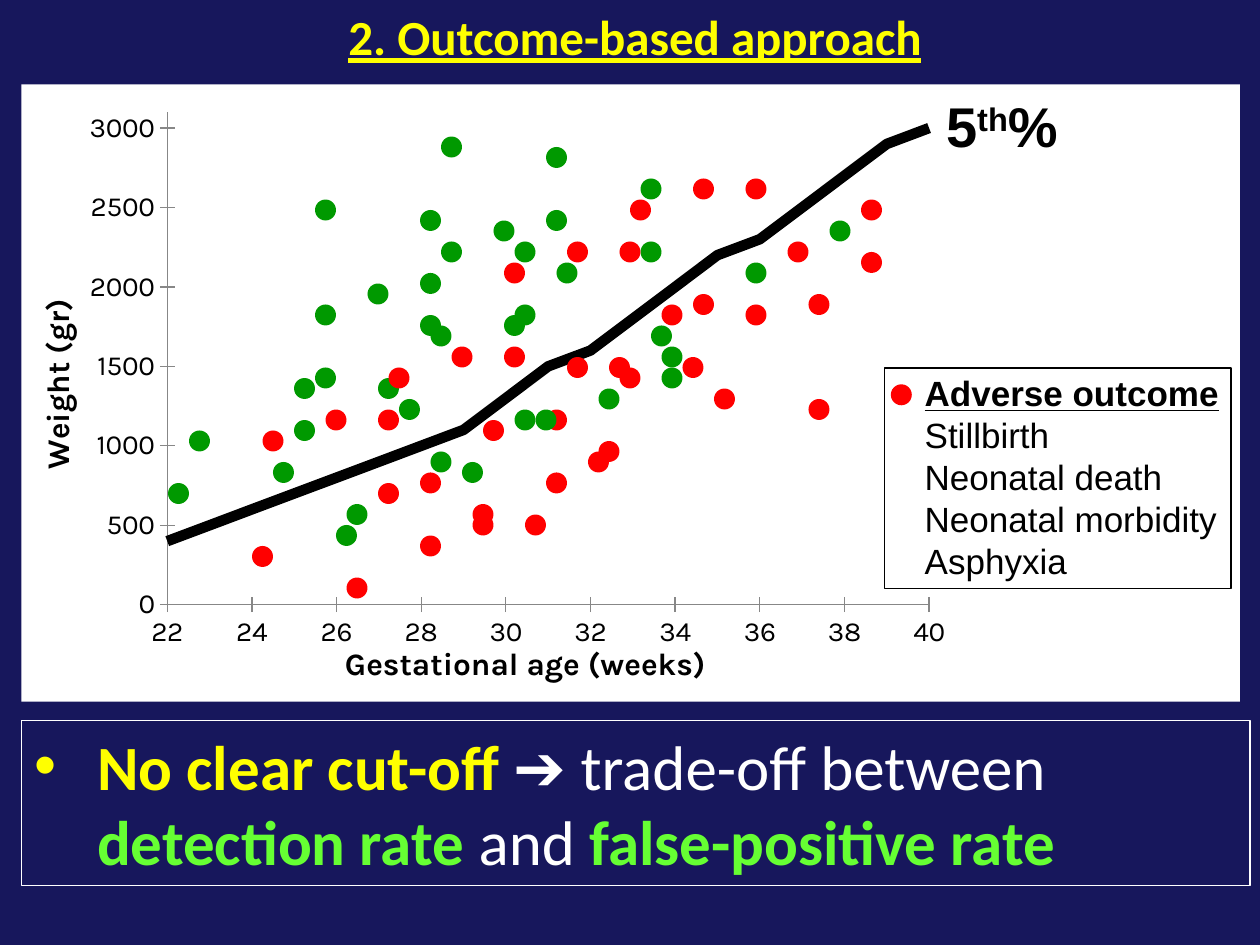
from dataclasses import dataclass

from lxml import etree
from pptx import Presentation
from pptx.chart.data import XyChartData
from pptx.dml.color import RGBColor
from pptx.enum.chart import XL_CHART_TYPE, XL_TICK_LABEL_POSITION, XL_TICK_MARK
from pptx.enum.shapes import MSO_SHAPE
from pptx.enum.text import MSO_ANCHOR, MSO_AUTO_SIZE, PP_ALIGN
from pptx.oxml import parse_xml
from pptx.oxml.ns import nsdecls, qn
from pptx.util import Inches, Pt


@dataclass(frozen=True)
class Theme:
    navy: str = "17175C"
    yellow: str = "FFFF00"
    white: str = "FFFFFF"
    black: str = "000000"
    grey: str = "878787"
    lime: str = "66FF33"
    red: str = "FF0000"
    green: str = "009900"
    heading_font: str = "Calibri"
    label_font: str = "Arial"
    chart_font: str = "Karla"
    title_size: int = 28
    body_size: int = 36
    percentile_size: int = 32
    legend_size: int = 20
    axis_title_size: int = 18
    tick_size: int = 16


THEME = Theme()
DOT = 1 / 6
GRID = 12  # dot positions are counted in twelfths of an inch

WEIGHTS = [400, 500, 600, 700, 800, 900, 1000, 1100, 1300, 1500,
           1600, 1800, 2000, 2200, 2300, 2500, 2700, 2900, 3000]

# Birth outcomes by layer, back to front: colour and (column, row)
OUTCOMES = [
    (THEME.red, [(71, 29), (58, 34), (75, 23), (77, 28), (66, 28), (68, 37), (82, 24),
                 (57, 42), (36, 46), (43, 33), (66, 17), (52, 39), (52, 45), (45, 49),
                 (77, 38)]),
    (THEME.green, [(61, 17), (47, 21), (53, 25), (52, 14), (61, 23), (42, 13), (48, 30),
                   (63, 33), (52, 20), (40, 30), (38, 38), (42, 23), (30, 35), (44, 44),
                   (28, 40)]),
    (THEME.red, [(59, 35), (46, 40), (63, 29), (65, 34), (54, 34), (56, 43), (50, 49),
                 (45, 48), (24, 52), (31, 39), (54, 23), (40, 45), (40, 51), (33, 55),
                 (82, 19)]),
    (THEME.green, [(49, 23), (35, 27), (41, 31), (40, 20), (49, 29), (30, 19), (36, 36),
                   (51, 39), (40, 26), (28, 36), (26, 44), (30, 29), (18, 41), (32, 50),
                   (16, 46), (63, 35), (49, 39), (33, 48), (41, 43), (79, 21), (71, 25),
                   (57, 37), (62, 31)]),
    (THEME.red, [(48, 33), (71, 17), (36, 39), (59, 23), (37, 35), (60, 19), (25, 41),
                 (48, 25)]),
]


def rgb(color):
    return RGBColor.from_string(color)


def style_font(font, name, size, color, bold=False, underline=False):
    font.name, font.size = name, Pt(size)
    font.bold, font.underline = bold, underline
    font.color.rgb = rgb(color)


def place(shape, left, top, width, height):
    shape.left, shape.top = Inches(left), Inches(top)
    shape.width, shape.height = Inches(width), Inches(height)


def add_shape(page, kind, left, top, width, height, fill=None, line=None, weight=1):
    shape = page.shapes.add_shape(
        kind, Inches(left), Inches(top), Inches(width), Inches(height))
    shape.shadow.inherit = False
    if fill:
        shape.fill.solid()
        shape.fill.fore_color.rgb = rgb(fill)
    else:
        shape.fill.background()
    if line:
        shape.line.color.rgb = rgb(line)
        shape.line.width = Pt(weight)
    else:
        shape.line.fill.background()
    return shape


def add_dot(page, left, top, color):
    add_shape(page, MSO_SHAPE.OVAL, left, top, DOT, DOT, fill=color)


def add_text(page, left, top, width, height):
    box = page.shapes.add_textbox(
        Inches(left), Inches(top), Inches(width), Inches(height))
    box.text_frame.word_wrap = True
    return box.text_frame


def fill_title(page):
    title = page.shapes.title
    place(title, 0.25, 0, 9.58, 0.57)
    title.text_frame.text = "2. Outcome-based approach"
    title.text_frame.auto_size = MSO_AUTO_SIZE.NONE
    para = title.text_frame.paragraphs[0]
    para.alignment = PP_ALIGN.CENTER
    style_font(para.runs[0].font, THEME.heading_font, THEME.title_size, THEME.yellow,
               bold=True, underline=True)


def fill_conclusion(page):
    body = page.placeholders[1]
    place(body, 0.17, 5.72, 9.75, 1.31)
    body.line.color.rgb = rgb(THEME.white)
    body.line.width = Pt(0.75)
    frame = body.text_frame
    frame.auto_size = MSO_AUTO_SIZE.NONE
    frame.vertical_anchor = MSO_ANCHOR.TOP
    para = frame.paragraphs[0]
    para.space_before = Pt(0)
    for text, color, bold in [
        ("No clear cut-off ", THEME.yellow, True),
        ("\u2794 trade-off between ", THEME.white, False),
        ("detection rate ", THEME.lime, True),
        ("and ", THEME.white, False),
        ("false-positive rate", THEME.lime, True),
    ]:
        span = para.add_run()
        span.text = text
        style_font(span.font, THEME.heading_font, THEME.body_size, color, bold)
    # Hanging bullet
    properties = para._p.get_or_add_pPr()
    properties.set("marL", str(Inches(0.5)))
    properties.set("indent", str(-Inches(0.5)))
    etree.SubElement(properties, qn("a:buFont")).set("typeface", "Arial")
    etree.SubElement(properties, qn("a:buChar")).set("char", "\u2022")


def manual_layout(left, top, width=None, height=None):
    parts = [("xMode", "edge"), ("yMode", "edge"), ("x", left), ("y", top)]
    if width:
        parts = [("layoutTarget", "inner")] + parts + [("w", width), ("h", height)]
    inner = "".join(f'<c:{tag} val="{value}"/>' for tag, value in parts)
    return parse_xml(f'<c:layout {nsdecls("c")}><c:manualLayout>{inner}'
                     '</c:manualLayout></c:layout>')


def set_layout(element, layout, position):
    for old in element.findall(qn("c:layout")):
        element.remove(old)
    element.insert(position, layout)


def format_axis(axis, title, low, high, step, left, top):
    axis.minimum_scale, axis.maximum_scale, axis.major_unit = low, high, step
    axis.has_major_gridlines = False
    axis.major_tick_mark = XL_TICK_MARK.CROSS
    axis.minor_tick_mark = XL_TICK_MARK.NONE
    axis.tick_label_position = XL_TICK_LABEL_POSITION.NEXT_TO_AXIS
    axis.tick_labels.number_format = "General"
    axis.tick_labels.number_format_is_linked = False
    axis.format.line.color.rgb = rgb(THEME.grey)
    style_font(axis.tick_labels.font, THEME.chart_font, THEME.tick_size, THEME.black)
    axis.axis_title.text_frame.text = title
    span = axis.axis_title.text_frame.paragraphs[0].runs[0]
    style_font(span.font, THEME.chart_font, THEME.axis_title_size, THEME.black, bold=True)
    set_layout(axis.axis_title._element, manual_layout(left, top), 1)


def add_growth_chart(page):
    data = XyChartData()
    series = data.add_series("Series 1")
    for week, weight in enumerate(WEIGHTS, start=22):
        series.add_data_point(week, weight)
    chart = page.shapes.add_chart(
        XL_CHART_TYPE.XY_SCATTER_SMOOTH_NO_MARKERS,
        Inches(0.17), Inches(0.75), Inches(7.42), Inches(4.75), data).chart
    chart.has_title = chart.has_legend = False
    style_font(chart.font, THEME.chart_font, 10, THEME.black)
    plot = chart.plots[0]
    plot.vary_by_categories = False
    curve = plot.series[0]
    curve.smooth = True
    curve.format.line.color.rgb = rgb(THEME.black)
    curve.format.line.width = Pt(6)
    format_axis(chart.category_axis, "Gestational age (weeks)", 22, 40, 2, 0.34, 0.92)
    format_axis(chart.value_axis, "Weight (gr)", 0, 3100, 500, 0.01, 0.34)
    area = chart._chartSpace.chart.plotArea
    set_layout(area, manual_layout(0.156, 0.03, 0.815, 0.834), 0)


def add_legend(page):
    frame = add_text(page, 7.24, 2.9, 2.58, 1.78)
    frame.text = "Adverse outcome\nStillbirth\nNeonatal death\nNeonatal morbidity\nAsphyxia"
    for index, para in enumerate(frame.paragraphs):
        heading = index == 0
        style_font(para.runs[0].font, THEME.label_font, THEME.legend_size, THEME.black,
                   bold=heading, underline=heading)
    add_dot(page, 7.07, 3.05, THEME.red)
    add_shape(page, MSO_SHAPE.RECTANGLE, 7.02, 2.92, 2.75, 1.75, line=THEME.black)


def add_percentile_label(page):
    para = add_text(page, 7.41, 0.68, 1.59, 0.64).paragraphs[0]
    for text in ("5", "th", "%"):
        span = para.add_run()
        span.text = text
        style_font(span.font, THEME.label_font, THEME.percentile_size, THEME.black, bold=True)
    para.runs[1].font._element.set("baseline", "30000")


def main():
    deck = Presentation()
    deck.slide_width, deck.slide_height = Inches(10), Inches(7.5)
    page = deck.slides.add_slide(deck.slide_layouts[1])
    page.background.fill.solid()
    page.background.fill.fore_color.rgb = rgb(THEME.navy)
    fill_title(page)
    fill_conclusion(page)
    # Chart panel with outcome dots on top
    add_shape(page, MSO_SHAPE.RECTANGLE, 0.17, 0.67, 9.67, 4.9, fill=THEME.white)
    add_growth_chart(page)
    add_legend(page)
    for color, dots in OUTCOMES:
        for column, row in dots:
            add_dot(page, column / GRID, row / GRID, color)
    add_percentile_label(page)
    deck.save("out.pptx")


main()
